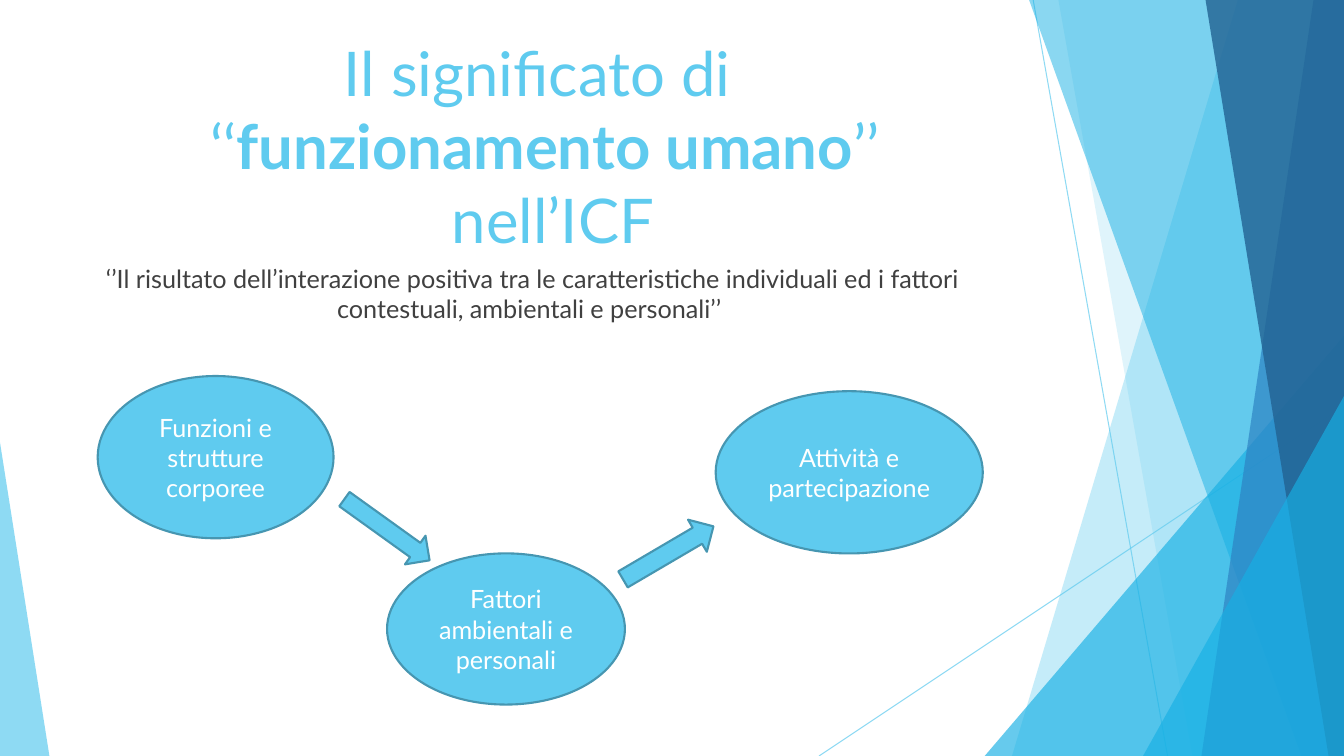
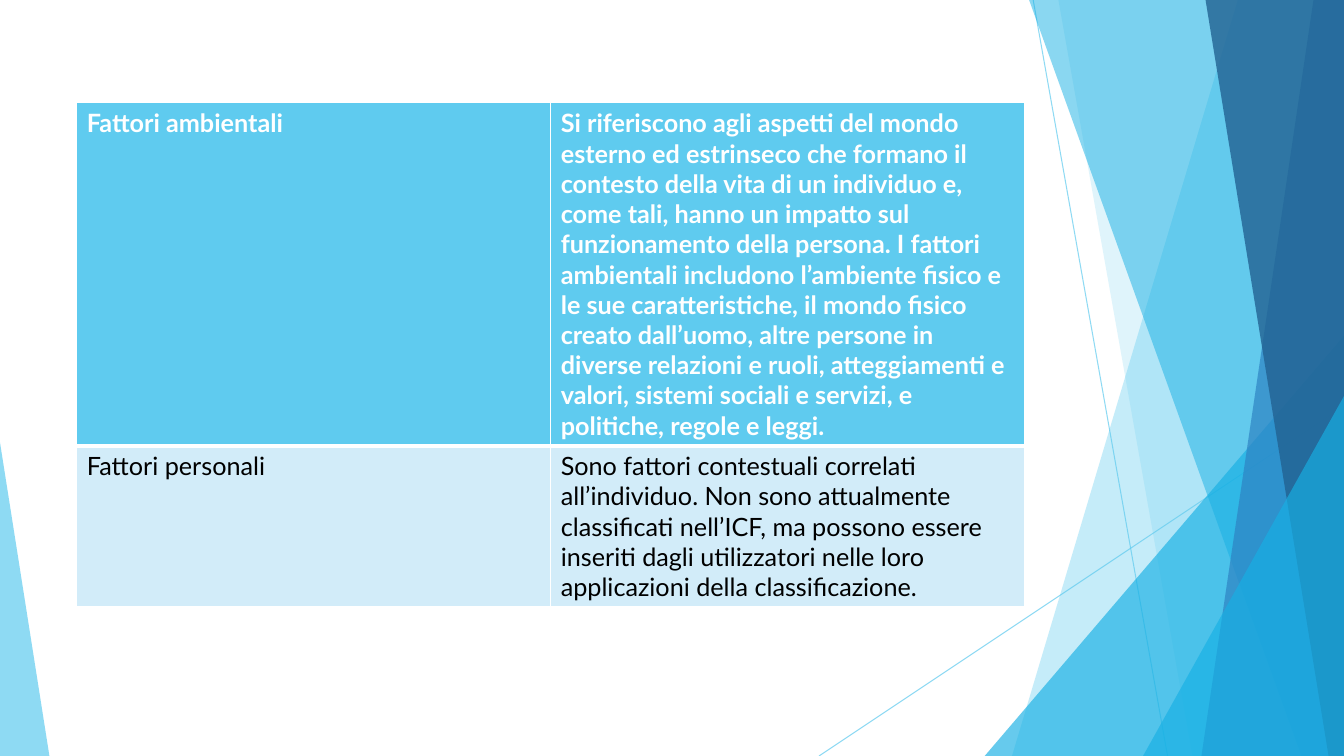
from dataclasses import dataclass

from lxml.etree import SubElement
from pptx import Presentation
from pptx.dml.color import RGBColor
from pptx.enum.shapes import MSO_CONNECTOR, MSO_SHAPE
from pptx.enum.text import MSO_ANCHOR, MSO_AUTO_SIZE, PP_ALIGN
from pptx.oxml import parse_xml
from pptx.oxml.ns import nsdecls, qn
from pptx.presentation import Presentation as Deck
from pptx.shapes.base import BaseShape
from pptx.slide import Slide
from pptx.table import _Cell as Cell
from pptx.text.text import TextFrame
from pptx.util import Pt

WIDTH, HEIGHT = 960, 540
FONT = "Lato"
BODY_SIZE = 18
TITLE_SIZE = 44

SKY = RGBColor(0x5F, 0xCB, 0xEF)
CYAN = RGBColor(0x17, 0xB0, 0xE4)
BLUE = RGBColor(0x2E, 0x83, 0xC3)
NAVY = RGBColor(0x22, 0x62, 0x92)
OUTLINE = RGBColor(0x46, 0x96, 0xB1)
PALE = RGBColor(0xD2, 0xEC, 0xF9)
GREY = RGBColor(0x40, 0x40, 0x40)
WHITE = RGBColor(0xFF, 0xFF, 0xFF)
BLACK = RGBColor(0x00, 0x00, 0x00)


@dataclass(frozen=True)
class Ray:
    start: tuple[float, float]
    end: tuple[float, float]


@dataclass(frozen=True)
class Band:
    top_x: float
    bottom_x: float
    color: RGBColor
    opacity: int


@dataclass(frozen=True)
class Wedge:
    left: float
    top: float
    width: float
    apex: float
    color: RGBColor
    opacity: int


@dataclass(frozen=True)
class Figure:
    kind: MSO_SHAPE
    left: float
    top: float
    width: float
    height: float
    text: str = ""
    rotation: float = 0


@dataclass(frozen=True)
class Factor:
    name: str
    description: str
    height: float
    fill: RGBColor
    color: RGBColor
    bold: bool
    top_border: float
    bottom_border: float


BACKDROP = [
    Ray((738, 0), (834, HEIGHT)),
    Ray((WIDTH, 290), (585, HEIGHT)),
    Band(884.2, 722.9, SKY, 36),
    Band(756, 851.8, SKY, 20),
    Wedge(703.4, 239.8, 256.6, 1, CYAN, 66),
    Band(735.1, 929.5, CYAN, 50),
    Band(938.2, 858.2, BLUE, 70),
    Band(861.1, 949, NAVY, 80),
    Wedge(816.5, 283, 143.5, 1, CYAN, 66),
    Wedge(0, 316.1, 35.3, 0, SKY, 70),
]

DIAGRAM = [
    Figure(MSO_SHAPE.OVAL, 69.8, 268.6, 168.5, 115.9, "Funzioni e strutture corporee"),
    Figure(MSO_SHAPE.OVAL, 276.5, 395.3, 169.9, 108, "Fattori ambientali e personali"),
    Figure(MSO_SHAPE.OVAL, 511.2, 279.4, 190.8, 115.9, "Attività e partecipazione"),
    Figure(MSO_SHAPE.RIGHT_ARROW, 239, 365.8, 74.9, 25.2, rotation=35.7),
    Figure(MSO_SHAPE.RIGHT_ARROW, 439.9, 381.6, 74.9, 26.6, rotation=329.6),
]

FACTORS = [
    Factor(
        "Fattori ambientali",
        "Si riferiscono agli aspetti del mondo esterno ed estrinseco che formano il "
        "contesto della vita di un individuo e, come tali, hanno un impatto sul "
        "funzionamento della persona. I fattori ambientali includono l’ambiente fisico "
        "e le sue caratteristiche, il mondo fisico creato dall’uomo, altre persone in "
        "diverse relazioni e ruoli, atteggiamenti e valori, sistemi sociali e servizi, "
        "e politiche, regole e leggi.",
        244.8, SKY, WHITE, True, 1, 3,
    ),
    Factor(
        "Fattori personali",
        "Sono fattori contestuali correlati all’individuo. Non sono attualmente "
        "classificati nell’ICF, ma possono essere inseriti dagli utilizzatori nelle "
        "loro applicazioni della classificazione.",
        115.2, PALE, BLACK, False, 3, 1,
    ),
]

TITLE_LINES = [
    [("Il significato di ", False)],
    [("‘‘", False), ("funzionamento umano", True), ("’’", False)],
    [(" nell’ICF", False)],
]


def set_opacity(shape: BaseShape, percent: int) -> None:
    for color in shape.element.xpath("./p:spPr//a:srgbClr"):
        SubElement(color, qn("a:alpha")).set("val", str(percent * 1000))


def add_run(paragraph, text: str, size: float, color: RGBColor, bold: bool = False) -> None:
    run = paragraph.add_run()
    run.text = text
    run.font.name = FONT
    run.font.size = Pt(size)
    run.font.bold = bold
    run.font.color.rgb = color


def write_centred(frame: TextFrame, text: str, color: RGBColor) -> None:
    frame.word_wrap = True
    paragraph = frame.paragraphs[0]
    paragraph.alignment = PP_ALIGN.CENTER
    add_run(paragraph, text, BODY_SIZE, color)


def draw_ray(slide: Slide, ray: Ray) -> BaseShape:
    connector = slide.shapes.add_connector(
        MSO_CONNECTOR.STRAIGHT, *(Pt(value) for value in ray.start + ray.end)
    )
    connector.line.color.rgb = SKY
    connector.line.width = Pt(0.75)
    SubElement(connector.element.spPr, qn("a:effectLst"))
    set_opacity(connector, 70)
    return connector


def draw_facet(slide: Slide, facet: Band | Wedge) -> BaseShape:
    if isinstance(facet, Band):
        builder = slide.shapes.build_freeform(Pt(facet.top_x), 0)
        corners = [(WIDTH, 0), (WIDTH, HEIGHT), (facet.bottom_x, HEIGHT)]
        builder.add_line_segments([(Pt(x), Pt(y)) for x, y in corners], close=True)
        shape = builder.convert_to_shape()
    else:
        shape = slide.shapes.add_shape(
            MSO_SHAPE.ISOSCELES_TRIANGLE,
            Pt(facet.left), Pt(facet.top), Pt(facet.width), Pt(HEIGHT - facet.top),
        )
        shape.adjustments[0] = facet.apex
    shape.shadow.inherit = False
    shape.fill.solid()
    shape.fill.fore_color.rgb = facet.color
    shape.line.fill.background()
    set_opacity(shape, facet.opacity)
    return shape


def build_master_backdrop(presentation: Deck, slide: Slide) -> None:
    master_tree = presentation.slide_master.element.cSld.spTree
    for identifier, item in enumerate(BACKDROP, start=100):
        shape = draw_ray(slide, item) if isinstance(item, Ray) else draw_facet(slide, item)
        shape.element.xpath(".//p:cNvPr")[0].set("id", str(identifier))
        master_tree.append(shape.element)


def draw_figure(slide: Slide, figure: Figure) -> None:
    shape = slide.shapes.add_shape(
        figure.kind, Pt(figure.left), Pt(figure.top), Pt(figure.width), Pt(figure.height)
    )
    shape.rotation = figure.rotation
    shape.shadow.inherit = False
    shape.fill.solid()
    shape.fill.fore_color.rgb = SKY
    shape.line.color.rgb = OUTLINE
    shape.line.width = Pt(1.5)
    if figure.text:
        write_centred(shape.text_frame, figure.text, WHITE)


def write_title(slide: Slide) -> None:
    title = slide.shapes.title
    title.left, title.top, title.width, title.height = Pt(51), Pt(21), Pt(677), Pt(103.7)
    frame = title.text_frame
    frame.word_wrap = True
    frame.auto_size = MSO_AUTO_SIZE.NONE
    frame.vertical_anchor = MSO_ANCHOR.TOP
    paragraph = frame.paragraphs[0]
    paragraph.alignment = PP_ALIGN.CENTER
    for index, line in enumerate(TITLE_LINES):
        if index:
            paragraph.add_line_break()
        for text, bold in line:
            add_run(paragraph, text, TITLE_SIZE, SKY, bold)


def build_functioning_slide(slide: Slide) -> None:
    write_title(slide)
    definition = slide.shapes.add_textbox(Pt(41.8), Pt(184.3), Pt(677), Pt(52))
    write_centred(
        definition.text_frame,
        "‘’Il risultato dell’interazione positiva tra le caratteristiche individuali "
        "ed i fattori contestuali, ambientali e personali’’ ",
        GREY,
    )
    for figure in DIAGRAM:
        draw_figure(slide, figure)


def set_borders(cell: Cell, top: float, bottom: float) -> None:
    properties = cell._tc.get_or_add_tcPr()
    widths = {"lnL": 1, "lnR": 1, "lnT": top, "lnB": bottom}
    for position, (side, width) in enumerate(widths.items()):
        border = parse_xml(
            f'<a:{side} {nsdecls("a")} w="{Pt(width)}"><a:solidFill>'
            f'<a:srgbClr val="{WHITE}"/></a:solidFill></a:{side}>'
        )
        properties.insert(position, border)


def build_factors_slide(slide: Slide) -> None:
    total = sum(factor.height for factor in FACTORS)
    table = slide.shapes.add_table(
        len(FACTORS), 2, Pt(54.9), Pt(73.5), Pt(677), Pt(total)
    ).table
    for row, factor in zip(table.rows, FACTORS):
        row.height = Pt(factor.height)
        for cell, text in zip(row.cells, (factor.name, factor.description)):
            cell.fill.solid()
            cell.fill.fore_color.rgb = factor.fill
            set_borders(cell, factor.top_border, factor.bottom_border)
            paragraph = cell.text_frame.paragraphs[0]
            add_run(paragraph, text, BODY_SIZE, factor.color, factor.bold)


def main() -> None:
    presentation = Presentation()
    presentation.slide_width = Pt(WIDTH)
    presentation.slide_height = Pt(HEIGHT)
    title_only = presentation.slide_layouts.get_by_name("Title Only")
    blank = presentation.slide_layouts.get_by_name("Blank")
    functioning_slide = presentation.slides.add_slide(title_only)
    build_master_backdrop(presentation, functioning_slide)
    build_functioning_slide(functioning_slide)
    build_factors_slide(presentation.slides.add_slide(blank))
    presentation.save("out.pptx")


if __name__ == "__main__":
    main()
